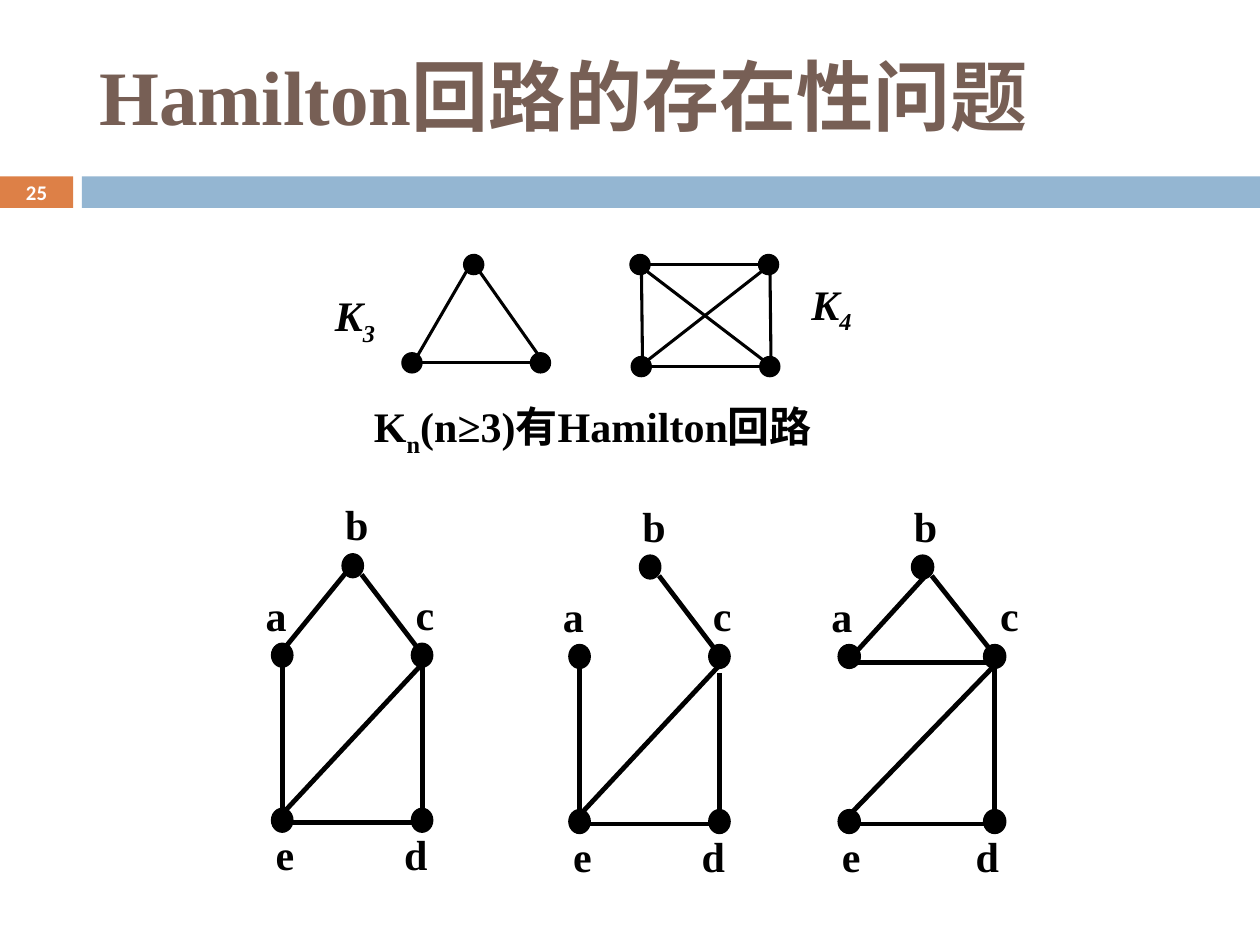
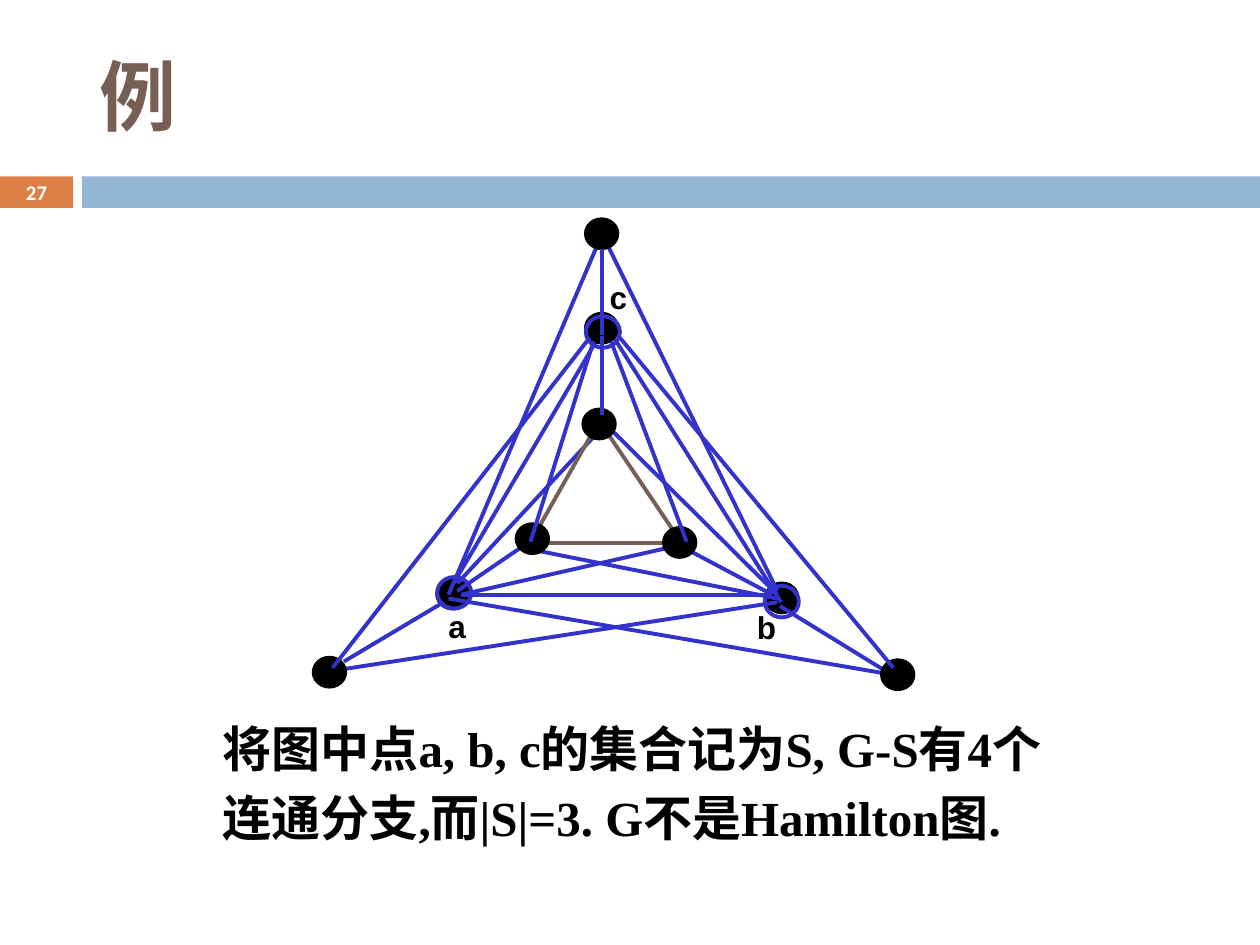
from lxml import etree
from pptx import Presentation
from pptx.dml.color import RGBColor
from pptx.enum.shapes import MSO_CONNECTOR, MSO_SHAPE
from pptx.enum.text import MSO_ANCHOR, PP_ALIGN
from pptx.oxml.ns import qn
from pptx.util import Inches, Pt

OVAL, RECT = MSO_SHAPE.OVAL, MSO_SHAPE.RECTANGLE
STRAIGHT = MSO_CONNECTOR.STRAIGHT
MIDDLE, TOP = MSO_ANCHOR.MIDDLE, MSO_ANCHOR.TOP
LEFT, CENTER = PP_ALIGN.LEFT, PP_ALIGN.CENTER

BLACK, WHITE = "000000", "FFFFFF"
ORANGE, BAND_BLUE, BROWN, EDGE_BLUE = "DD8047", "94B6D2", "775F55", "3333CC"
SERIF, SANS, NUMBER_FONT = "Times New Roman", "Arial", "Calibri"

# House graph, measured from node a: node centres, label corners, edge ends.
HOUSE_NODES = {"a": (0, 0), "b": (0.56, -0.71), "c": (1.11, 0),
               "d": (1.11, 1.31), "e": (0, 1.31)}
HOUSE_LABELS = {"a": (-0.23, -0.57), "b": (0.4, -1.29), "c": (0.96, -0.58),
                "d": (0.87, 1.33), "e": (-0.15, 1.33)}
HOUSE_EDGES = {"ab": (0.03, -0.07, 0.51, -0.66), "bc": (0.63, -0.64, 1.11, -0.01),
               "cd": (1.11, 0.07, 1.11, 1.25), "ce": (1.11, 0.07, 0, 1.26),
               "de": (1.11, 1.33, 0, 1.33), "ae": (0, 0.07, 0, 1.25)}

# Complete graphs, measured from the corner of their box.
K3_NODES = [(0.57, 0.08), (0.08, 0.86), (1.1, 0.86)]
K3_EDGES = [(0.16, 0.86, 1.02, 0.86), (0.59, 0, 0.12, 0.81), (0.62, 0.14, 1.12, 0.85)]
K4_NODES = [(0.08, 0.08), (1.1, 0.08), (0.09, 0.89), (1.11, 0.89)]
K4_EDGES = [(0.16, 0.08, 1.02, 0.08), (1.06, 0.84, 0.13, 0.13),
            (0.17, 0.89, 1.03, 0.89), (1.12, 0.89, 1.11, 0.03),
            (0.1, 0.91, 0.09, 0.04), (0.14, 0.84, 1.05, 0.13)]

# Nested triangles: each hub has a disc, a ring, a label and spokes.
HUB_A = ("a", (1.06, 2.89), (1.07, 2.88), (1.06, 3.07), [
    (1.26, 3.02, 3.9, 3.02), (2.36, 0.2, 1.16, 3.02), (2.36, 0.96, 1.2, 2.93),
    (1.16, 3.05, 4.77, 3.67), (1.83, 2.58, 1.23, 2.99), (1.12, 3.08, 0.33, 3.55),
    (1.26, 3.02, 3.07, 2.61), (1.23, 2.93, 2.43, 1.64)])
HUB_B = ("b", (3.67, 2.92), (3.67, 2.95), (3.51, 3.08), [
    (2.4, 0.2, 3.77, 2.99), (2.46, 0.96, 3.8, 3.08), (3.79, 3.11, 4.7, 3.67),
    (3.07, 2.67, 3.73, 3.02), (1.86, 2.67, 3.77, 3.05), (0.33, 3.61, 3.77, 3.08),
    (2.46, 1.72, 3.77, 3.02)])
HUB_C = ("c", (2.24, 0.78), (2.25, 0.81), (2.34, 0.46), [
    (2.38, 0.28, 2.38, 0.96), (2.38, 0.97, 2.38, 1.59), (2.31, 1.01, 1.81, 2.6),
    (2.45, 1.01, 3.05, 2.6), (2.52, 0.98, 4.69, 3.6), (2.28, 0.98, 0.24, 3.6)])
INNER_EDGES = [(1.89, 2.61, 2.89, 2.61), (2.31, 1.72, 1.84, 2.55),
               (2.41, 1.72, 3.01, 2.61)]
OTHER_NODES = [(0.08, 3.51), (1.69, 2.45), (2.24, 0.03), (2.22, 1.54),
               (2.86, 2.48), (4.59, 3.53)]


def rgb(value):
    return RGBColor.from_string(value)


def add_shape(s, kind, x, y, w, h, fill=None, line=None, width=0.75):
    sp = s.shapes.add_shape(kind, Inches(x), Inches(y), Inches(w), Inches(h))
    sp.shadow.inherit = False
    if fill:
        sp.fill.solid()
        sp.fill.fore_color.rgb = rgb(fill)
    else:
        sp.fill.background()
    if line:
        sp.line.color.rgb = rgb(line)
        sp.line.width = Pt(width)
    else:
        sp.line.fill.background()


def add_edges(s, x, y, edges, color, width):
    for x1, y1, x2, y2 in edges:
        line = s.shapes.add_connector(STRAIGHT, Inches(x + x1), Inches(y + y1),
                                      Inches(x + x2), Inches(y + y2))
        line.line.color.rgb = rgb(color)
        line.line.width = Pt(width)
        etree.SubElement(line._element.spPr, qn("a:effectLst"))


def add_text(s, x, y, w, h, runs, size, font=SERIF, color=BLACK, italic=False,
             anchor=TOP, align=LEFT, wrap=True):
    """Write bold runs in one paragraph; a run is a string or (string, 'sub')."""
    tf = s.shapes.add_textbox(Inches(x), Inches(y), Inches(w), Inches(h)).text_frame
    tf.word_wrap = wrap
    tf.vertical_anchor = anchor
    p = tf.paragraphs[0]
    p.alignment = align
    for run in [runs] if isinstance(runs, str) else runs:
        r = p.add_run()
        r.text = run if isinstance(run, str) else run[0]
        r.font.name, r.font.size = font, Pt(size)
        r.font.bold, r.font.italic = True, italic
        r.font.color.rgb = rgb(color)
        if not isinstance(run, str):
            r._r.get_or_add_rPr().set("baseline", "-25000")
    return p


def add_frame(prs, title, number):
    """Start a slide with its title, bands and number."""
    s = prs.slides.add_slide(prs.slide_layouts[6])
    add_shape(s, RECT, 0, 1.4, 0.58, 0.25, ORANGE)
    add_shape(s, RECT, 0.65, 1.4, 9.35, 0.25, BAND_BLUE)
    add_text(s, 0, 1.39, 0.58, 0.27, number, 11.9, NUMBER_FONT, WHITE,
             anchor=MIDDLE, align=CENTER)
    add_text(s, 0.69, 0.13, 8.25, 1.25, title, 44, color=BROWN, anchor=MIDDLE)
    return s


def complete_graph(s, x, y, nodes, edges, order, label_x, label_y):
    add_edges(s, x, y, edges, BLACK, 1.75)
    for node_x, node_y in nodes:
        add_shape(s, OVAL, x + node_x - 0.08, y + node_y - 0.08, 0.16, 0.16,
                  BLACK, BLACK)
    add_text(s, x + label_x, y + label_y, 0.79, 0.55, ["K", (order, "sub")], 24,
             italic=True, wrap=False)


def house_graph(s, x, y, edges, stretch=1, c_shift=0):
    """Draw a five-node graph whose node a is centred at x, y."""
    add_edges(s, x, y, [(x1 * stretch, y1, x2 * stretch, y2)
                        for x1, y1, x2, y2 in edges.values()], BLACK, 2.75)
    w, h = 0.17 * stretch, 0.19
    for name, (node_x, node_y) in HOUSE_NODES.items():
        add_shape(s, OVAL, x + node_x * stretch - w / 2, y + node_y - h / 2, w, h,
                  BLACK, BLACK)
        label_x, label_y = HOUSE_LABELS[name]
        shift = c_shift if name == "c" else 0
        add_text(s, x + label_x * stretch + shift, y + label_y, 0.4, 0.5, name, 24)


def hub(s, x, y, name, disc, ring, label, spokes):
    add_shape(s, OVAL, x + disc[0], y + disc[1], 0.27, 0.25, BLACK, BLACK)
    add_edges(s, x, y, spokes, EDGE_BLUE, 2.25)
    add_shape(s, OVAL, x + ring[0], y + ring[1], 0.27, 0.25, None, EDGE_BLUE, 2.25)
    add_text(s, x + label[0], y + label[1], 0.37, 0.4, name, 18, SANS, wrap=False)


def nested_triangles(s, x, y):
    hub(s, x, y, *HUB_A)
    hub(s, x, y, *HUB_B)
    add_edges(s, x, y, INNER_EDGES, BROWN, 2.25)
    for node_x, node_y in OTHER_NODES:
        add_shape(s, OVAL, x + node_x, y + node_y, 0.27, 0.25, BLACK, BLACK)
    hub(s, x, y, *HUB_C)


def existence_slide(prs):
    s = add_frame(prs, "Hamilton回路的存在性问题", "25")
    p = add_text(s, 2.87, 3.04, 3.94, 0.71,
                 ["K", ("n", "sub"), "(n≥3)有Hamilton回路"], 24)
    p.line_spacing, p.space_before = 1.2, Pt(7)
    complete_graph(s, 3.19, 2.02, K3_NODES, K3_EDGES, "3", -0.63, 0.23)
    complete_graph(s, 5, 2.02, K4_NODES, K4_EDGES, "4", 1.34, 0.14)

    house_graph(s, 2.24, 5.2, HOUSE_EDGES)
    path_edges = HOUSE_EDGES | {"cd": (1.11, 0.13, 1.11, 1.31)}
    del path_edges["ab"]
    house_graph(s, 4.6, 5.21, path_edges)
    bowtie_edges = HOUSE_EDGES | {"ab": (0.03, -0.01, 0.6, -0.66),
                                  "ac": (0, 0.05, 1.06, 0.05)}
    del bowtie_edges["ae"]
    house_graph(s, 6.74, 5.21, bowtie_edges, 1.04, 0.1)


def example_slide(prs):
    s = add_frame(prs, "例", "27")
    nested_triangles(s, 2.4, 1.7)
    p = add_text(s, 1.67, 5.65, 6.92, 1.33,
                 ["将图中点a, b, c的集合记为S, G-S有4个连通分支,而|S|=3. "
                  "G不是Hamilton图.", " "], 28)
    p.space_before = Pt(7)
    p.runs[-1].font.size = Pt(34)


def main():
    prs = Presentation()
    prs.slide_width, prs.slide_height = Inches(10), Inches(7.5)
    existence_slide(prs)
    example_slide(prs)
    prs.save("out.pptx")


if __name__ == "__main__":
    main()
